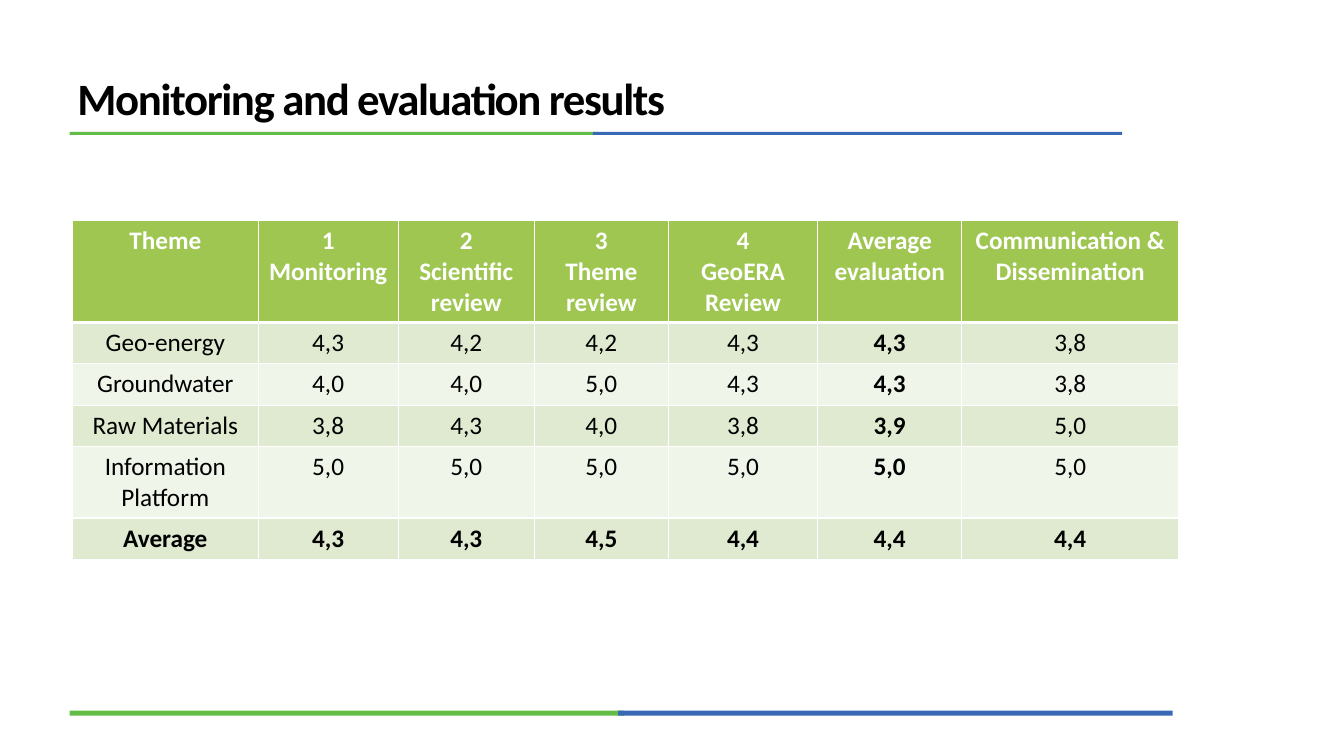
from lxml.etree import SubElement
from pptx import Presentation
from pptx.dml.color import RGBColor
from pptx.enum.shapes import MSO_SHAPE
from pptx.enum.text import MSO_ANCHOR, PP_ALIGN
from pptx.oxml.ns import qn
from pptx.util import Inches, Pt

GREEN, BLUE = "62BC45", "3869B4"
HEADER_FILL, BAND_FILLS = "9EC650", ("DFEAD0", "F0F5E9")
WHITE, BLACK = "FFFFFF", "000000"

HEADERS = [
    "Theme", "1\nMonitoring", "2\nScientific review", "3\nTheme review",
    "4\nGeoERA Review", "Average evaluation", "Communication & Dissemination",
]
SCORES = [
    ["Geo-energy", "4,3", "4,2", "4,2", "4,3", "4,3", "3,8"],
    ["Groundwater", "4,0", "4,0", "5,0", "4,3", "4,3", "3,8"],
    ["Raw Materials", "3,8", "4,3", "4,0", "3,8", "3,9", "5,0"],
    ["Information Platform", "5,0", "5,0", "5,0", "5,0", "5,0", "5,0"],
    ["Average", "4,3", "4,3", "4,5", "4,4", "4,4", "4,4"],
]
COLUMN_WIDTHS = [1.84, 1.39, 1.35, 1.33, 1.48, 1.43, 2.15]
ROW_HEIGHTS = [1.01, 0.41, 0.41, 0.41, 0.71, 0.41]
AVERAGE_COLUMN = HEADERS.index("Average evaluation")


def color(value):
    return RGBColor.from_string(value)


def write_text(frame, text, size=18, fill=BLACK, bold=False,
               align=PP_ALIGN.LEFT, spacing=None, font="Calibri"):
    frame.word_wrap = True
    for index, line in enumerate(text.split("\n")):
        para = frame.paragraphs[0] if index == 0 else frame.add_paragraph()
        para.alignment = align
        span = para.add_run()
        span.text = line
        span.font.name = font
        span.font.size = Pt(size)
        span.font.bold = bold
        span.font.color.rgb = color(fill)
        if spacing is not None:
            span.font._element.set("spc", str(int(spacing * 100)))


class SlideBuilder:
    def __init__(self, deck):
        self.page = deck.slides.add_slide(deck.slide_layouts[6])

    def bar(self, left, top, width, height, fill):
        shape = self.page.shapes.add_shape(
            MSO_SHAPE.RECTANGLE, Inches(left), Inches(top), Inches(width), Inches(height))
        shape.shadow.inherit = False
        shape.fill.solid()
        shape.fill.fore_color.rgb = color(fill)
        shape.line.fill.background()

    def two_tone_rule(self, left, middle, top, width, height):
        self.bar(left, top, width, height, GREEN)
        self.bar(middle, top, width, height, BLUE)

    def title(self, text, left, top, width, height):
        box = self.page.shapes.add_textbox(
            Inches(left), Inches(top), Inches(width), Inches(height))
        box.text_frame.vertical_anchor = MSO_ANCHOR.MIDDLE
        write_text(box.text_frame, text, size=32, bold=True, spacing=-1)

    def cell_borders(self, cell, top, bottom):
        properties = cell._tc.get_or_add_tcPr()
        for side, width in (("L", 1), ("R", 1), ("T", top), ("B", bottom)):
            line = SubElement(properties, qn(f"a:ln{side}"), w=str(Pt(width)))
            fill = SubElement(line, qn("a:solidFill"))
            SubElement(fill, qn("a:srgbClr"), val=WHITE)

    def score_table(self, left, top):
        rows = [HEADERS] + SCORES
        table = self.page.shapes.add_table(
            len(rows), len(HEADERS), Inches(left), Inches(top),
            Inches(sum(COLUMN_WIDTHS)), Inches(sum(ROW_HEIGHTS))).table
        for column, width in zip(table.columns, COLUMN_WIDTHS):
            column.width = Inches(width)
        for row, height in zip(table.rows, ROW_HEIGHTS):
            row.height = Inches(height)
        for row_index, values in enumerate(rows):
            header = row_index == 0
            for column_index, value in enumerate(values):
                cell = table.cell(row_index, column_index)
                self.cell_borders(cell, top=3 if row_index == 1 else 1,
                                  bottom=3 if header else 1)
                cell.fill.solid()
                cell.fill.fore_color.rgb = color(
                    HEADER_FILL if header else BAND_FILLS[(row_index - 1) % 2])
                strong = (header or row_index == len(rows) - 1
                          or column_index == AVERAGE_COLUMN)
                write_text(cell.text_frame, value, bold=strong,
                           fill=WHITE if header else BLACK, align=PP_ALIGN.CENTER)


def main():
    deck = Presentation()
    deck.slide_width, deck.slide_height = Inches(13.33), Inches(7.5)
    builder = SlideBuilder(deck)
    builder.two_tone_rule(0.69, 6.13, 7.05, 5.5, 0.05)
    builder.two_tone_rule(0.69, 5.88, 1.31, 5.25, 0.03)
    builder.title("Monitoring and evaluation results", 0.67, 0.64, 11.07, 0.65)
    builder.score_table(0.72, 2.19)
    deck.save("out.pptx")


if __name__ == "__main__":
    main()
